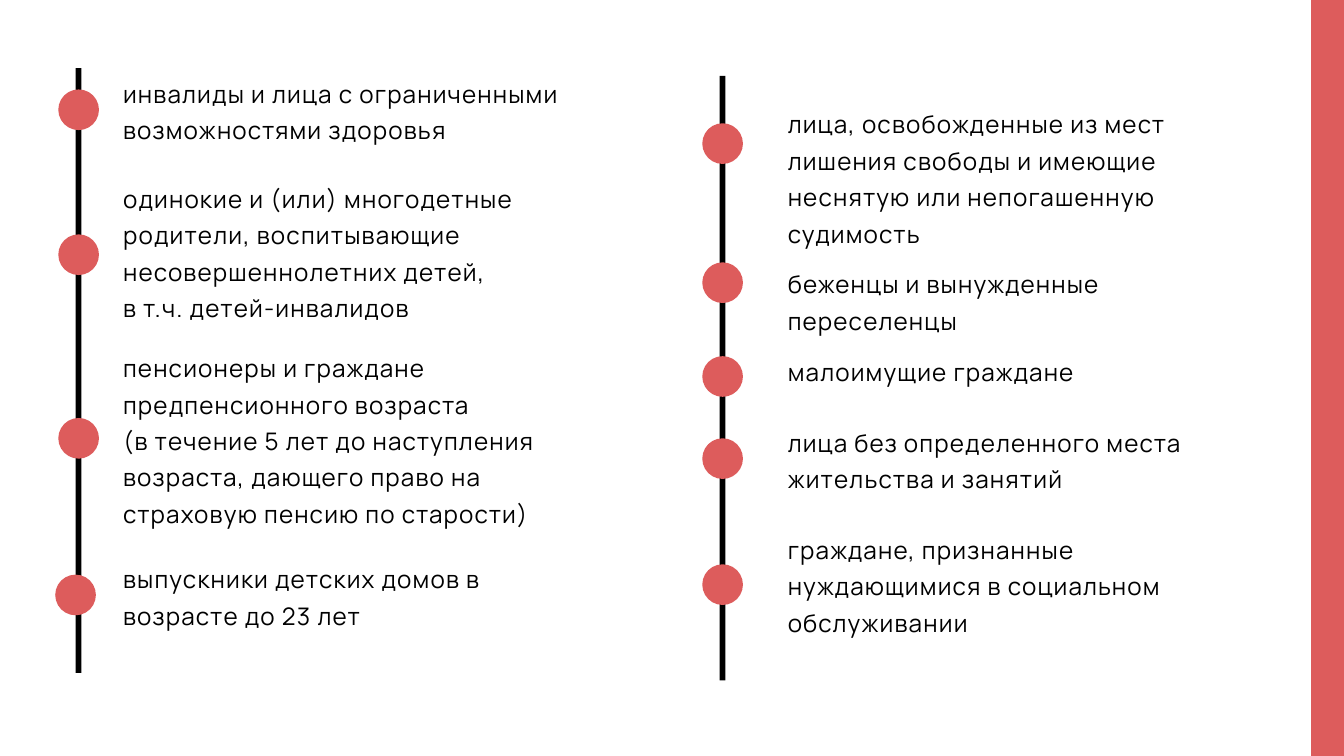
from pptx import Presentation
from pptx.dml.color import RGBColor
from pptx.enum.shapes import MSO_SHAPE
from pptx.enum.text import MSO_AUTO_SIZE
from pptx.util import Pt

COLORS = {"ink": "000000", "red": "DD5C5C"}
WIDE, HIGH = 793.44, 446.4
DOT, LINE, LEAD = 24, 3.4, 21.5

COLUMNS = [
    {"axis": 46.4, "top": 40.3, "left": 72.7, "items": [
        (46.4, 52.8, 42.5, 2, ["инвалиды и лица с ограниченными возможностями здоровья"]),
        (46.4, 138.4, 104.4, 4, [
            "одинокие и (или) многодетные родители, воспитывающие несовершеннолетних детей,",
            "в т.ч. детей-инвалидов"]),
        (46.4, 246.8, 204.5, 5, [
            "пенсионеры и граждане предпенсионного возраста",
            "(в течение 5 лет до наступления возраста, дающего право на страховую пенсию по старости)"]),
        (44.6, 339.3, 329, 2, ["выпускники детских домов в возрасте до 23 лет"]),
    ]},
    {"axis": 426.6, "top": 44.8, "left": 465.1, "items": [
        (426.6, 72.8, 60.5, 4, [
            "лица, освобожденные из мест лишения свободы и имеющие неснятую или непогашенную судимость"]),
        (426.6, 154.9, 154.8, 2, ["беженцы и вынужденные переселенцы"]),
        (426.6, 210.3, 206.6, 1, ["малоимущие граждане"]),
        (426.6, 258.8, 248.4, 2, ["лица без определенного места жительства и занятий"]),
        (426.6, 333.2, 311.8, 3, ["граждане, признанные нуждающимися в социальном обслуживании"]),
    ]},
]

FONT = {"name": "Manrope", "size": Pt(14.3)}
FRAME = {"margin_left": 0, "margin_right": 0, "margin_top": 0, "margin_bottom": 0,
         "word_wrap": True, "auto_size": MSO_AUTO_SIZE.SHAPE_TO_FIT_TEXT}


def apply(item, values):
    for key, value in values.items():
        setattr(item, key, value)


def draw(slide, kind, color, *box):
    shape = slide.shapes.add_shape(kind, *map(Pt, box))
    shape.shadow.inherit = False
    shape.fill.solid()
    shape.fill.fore_color.rgb = RGBColor.from_string(COLORS[color])
    shape.line.fill.background()


def write(slide, lines, *box):
    frame = slide.shapes.add_textbox(*map(Pt, box)).text_frame
    apply(frame, FRAME)
    for i, line in enumerate(lines):
        para = frame.add_paragraph() if i else frame.paragraphs[0]
        para.line_spacing = Pt(LEAD)
        run = para.add_run()
        run.text = line
        apply(run.font, FONT)
        run.font.color.rgb = RGBColor.from_string(COLORS["ink"])
        run.font._element.set("spc", "70")


def main():
    deck = Presentation()
    apply(deck, {"slide_width": Pt(WIDE), "slide_height": Pt(HIGH)})
    slide = deck.slides.add_slide(deck.slide_layouts[6])
    draw(slide, MSO_SHAPE.RECTANGLE, "red", 774, 0, WIDE - 774, HIGH)
    for col in COLUMNS:
        draw(slide, MSO_SHAPE.RECTANGLE, "ink", col["axis"] - LINE / 2, col["top"], LINE, 357)
        for mid, dot, top, rows, lines in col["items"]:
            draw(slide, MSO_SHAPE.OVAL, "red", mid - DOT / 2, dot, DOT, DOT)
            write(slide, lines, col["left"], top, 266.4, rows * LEAD)
    deck.save("out.pptx")


if __name__ == "__main__":
    main()
